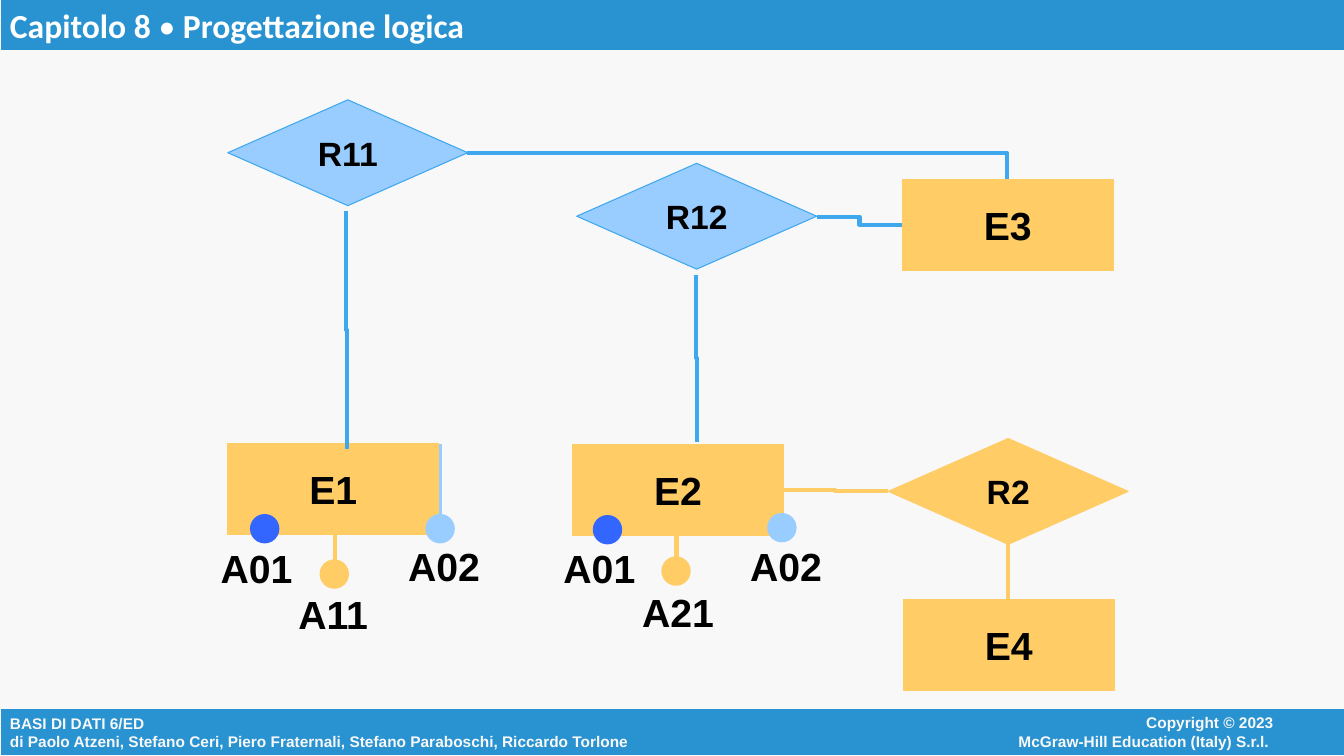
"""Build the slide with the logical design diagram of chapter 8."""
from lxml import etree
from pptx import Presentation
from pptx.dml.color import RGBColor
from pptx.enum.shapes import MSO_CONNECTOR, MSO_SHAPE
from pptx.enum.text import MSO_ANCHOR, PP_ALIGN
from pptx.oxml.ns import qn
from pptx.util import Inches, Pt

STRAIGHT, ELBOW = MSO_CONNECTOR.STRAIGHT, MSO_CONNECTOR.ELBOW
RECTANGLE, DIAMOND, OVAL = MSO_SHAPE.RECTANGLE, MSO_SHAPE.DIAMOND, MSO_SHAPE.OVAL
LEFT, CENTER, RIGHT = PP_ALIGN.LEFT, PP_ALIGN.CENTER, PP_ALIGN.RIGHT
TOP, MIDDLE = MSO_ANCHOR.TOP, MSO_ANCHOR.MIDDLE

COLORS = {
    "background": "F8F8F8", "bar": "2993D1", "white": "FFFFFF", "black": "000000",
    "entity": "FFCC66", "relation": "99CCFF", "link": "3EA7EE", "key": "3366FF",
}
COLORS = {name: RGBColor.from_string(value) for name, value in COLORS.items()}

presentation = Presentation()
presentation.slide_width = Inches(13.33)
presentation.slide_height = Inches(7.5)
slide = presentation.slides.add_slide(presentation.slide_layouts[6])
slide.background.fill.solid()
slide.background.fill.fore_color.rgb = COLORS["background"]


def add_shape(kind, box, fill, line, width):
    """Add a preset shape with a plain fill and outline."""
    shape = slide.shapes.add_shape(kind, *map(Inches, box))
    shape.shadow.inherit = False
    shape.fill.solid()
    shape.fill.fore_color.rgb = COLORS[fill]
    shape.line.color.rgb = COLORS[line]
    shape.line.width = Pt(width)
    return shape


def write(shape, lines, size, color, alignment=LEFT, anchor=TOP, wrap=True, font="Arial"):
    """Write paragraphs, each a list of (text, bold) runs."""
    frame = shape.text_frame
    frame.word_wrap = wrap
    frame.vertical_anchor = anchor
    for index, runs in enumerate(lines):
        paragraph = frame.add_paragraph() if index else frame.paragraphs[0]
        paragraph.alignment = alignment
        for text, bold in runs:
            run = paragraph.add_run()
            run.text = text
            run.font.color.rgb = COLORS[color]
            for name, value in {"size": Pt(size), "name": font, "bold": bold}.items():
                setattr(run.font, name, value)


footer = add_shape(RECTANGLE, (0, 7.03, 13.35, 0.47), "bar", "background", 0.75)
footer_lines = [
    [("BASI DI DATI 6/ED", True)],
    [("di Paolo Atzeni, Stefano Ceri, Piero Fraternali, Stefano Paraboschi, "
      "Riccardo Torlone", True)],
]
write(footer, footer_lines, 11, "background", anchor=MIDDLE)
rights = slide.shapes.add_textbox(Inches(8.89), Inches(7.03), Inches(3.84), Inches(0.46))
rights_lines = [[("Copyright © 2023", True)], [("McGraw-Hill Education (Italy) S.r.l. ", True)]]
write(rights, rights_lines, 11, "background", RIGHT)
header = add_shape(RECTANGLE, (0, 0, 13.35, 0.5), "bar", "background", 0)
title = [("Capitolo 8 ", True), ("•", False), (" Progettazione logica", True)]
write(header, [title], 24, "white", font="Calibri")

stems_behind = [
    (STRAIGHT, 2.62, 4.4, 2.63, 5.15, "key", {}, None),
    (STRAIGHT, 6.03, 4.41, 6.03, 5.16, "key", {}, None),
    (STRAIGHT, 4.36, 4.4, 4.36, 5.15, "relation", {}, None),
    (STRAIGHT, 7.76, 4.4, 7.76, 5.15, "relation", {}, None),
    (STRAIGHT, 10, 5.4, 10, 5.95, "entity", {}, None),
    (ELBOW, 7.76, 4.86, 8.81, 4.87, "entity", {}, None),
]
turned = {"rot": "16200000", "flipH": "1"}
corner = {"rot": "16200000", "flipV": "1"}
links_in_front = [
    (STRAIGHT, 3.32, 5.23, 3.32, 5.65, "entity", {}, None),
    (STRAIGHT, 6.71, 5.17, 6.71, 5.59, "entity", {}, None),
    (ELBOW, 8.1, 2.15, 8.95, 2.23, "link", {}, None),
    (ELBOW, 6.08, 3.55, 7.74, 3.56, "link", turned, None),
    (ELBOW, 7.18, -1.03, 7.44, 4.33, "link", corner, "bentConnector2"),
    (ELBOW, 2.26, 3.27, 4.62, 3.28, "link", turned, None),
]
nodes = [
    ("E3", RECTANGLE, 8.95, 1.78, "entity", "entity"),
    ("R2", DIAMOND, 8.81, 4.35, "entity", "entity"),
    ("E4", RECTANGLE, 8.96, 5.95, "entity", "entity"),
    ("E2", RECTANGLE, 5.68, 4.41, "entity", "entity"),
    ("E1", RECTANGLE, 2.26, 4.4, "entity", "entity"),
    ("R12", DIAMOND, 5.72, 1.62, "relation", "link"),
    ("R11", DIAMOND, 2.26, 0.99, "relation", "link"),
]
node_formats = {RECTANGLE: (2.09, 0.9, 28), DIAMOND: (2.38, 1.05, 24)}

for layer in (stems_behind, links_in_front):
    for kind, left, top, right, bottom, color, turn, preset in layer:
        connector = slide.shapes.add_connector(kind, *map(Inches, (left, top, right, bottom)))
        connector.line.color.rgb = COLORS[color]
        connector.line.width = Pt(3)
        properties = connector._element.spPr
        etree.SubElement(properties, qn("a:effectLst"))
        for name, value in turn.items():
            properties.find(qn("a:xfrm")).set(name, value)
        if preset:
            properties.find(qn("a:prstGeom")).set("prst", preset)
    if layer is stems_behind:
        for name, kind, left, top, fill, line in nodes:
            width, height, size = node_formats[kind]
            node = add_shape(kind, (left, top, width, height), fill, line, 0.75)
            write(node, [[(name, True)]], size, "black", CENTER, MIDDLE, False)

attributes = [
    ("A11", 2.86, 5.81, 3.19, 5.57, "entity"),
    ("A21", 6.27, 5.79, 6.58, 5.54, "entity"),
    ("A01", 2.09, 5.35, 2.5, 5.12, "key"),
    ("A02", 3.95, 5.33, 4.24, 5.12, "relation"),
    ("A01", 5.49, 5.35, 5.9, 5.13, "key"),
    ("A02", 7.34, 5.33, 7.63, 5.11, "relation"),
]
for name, left, top, dot_left, dot_top, color in attributes:
    label = slide.shapes.add_textbox(*map(Inches, (left, top, 0.91, 0.56)))
    write(label, [[(name, True)]], 28, "black", wrap=False)
    add_shape(OVAL, (dot_left, dot_top, 0.25, 0.25), color, color, 3)

presentation.save("out.pptx")
